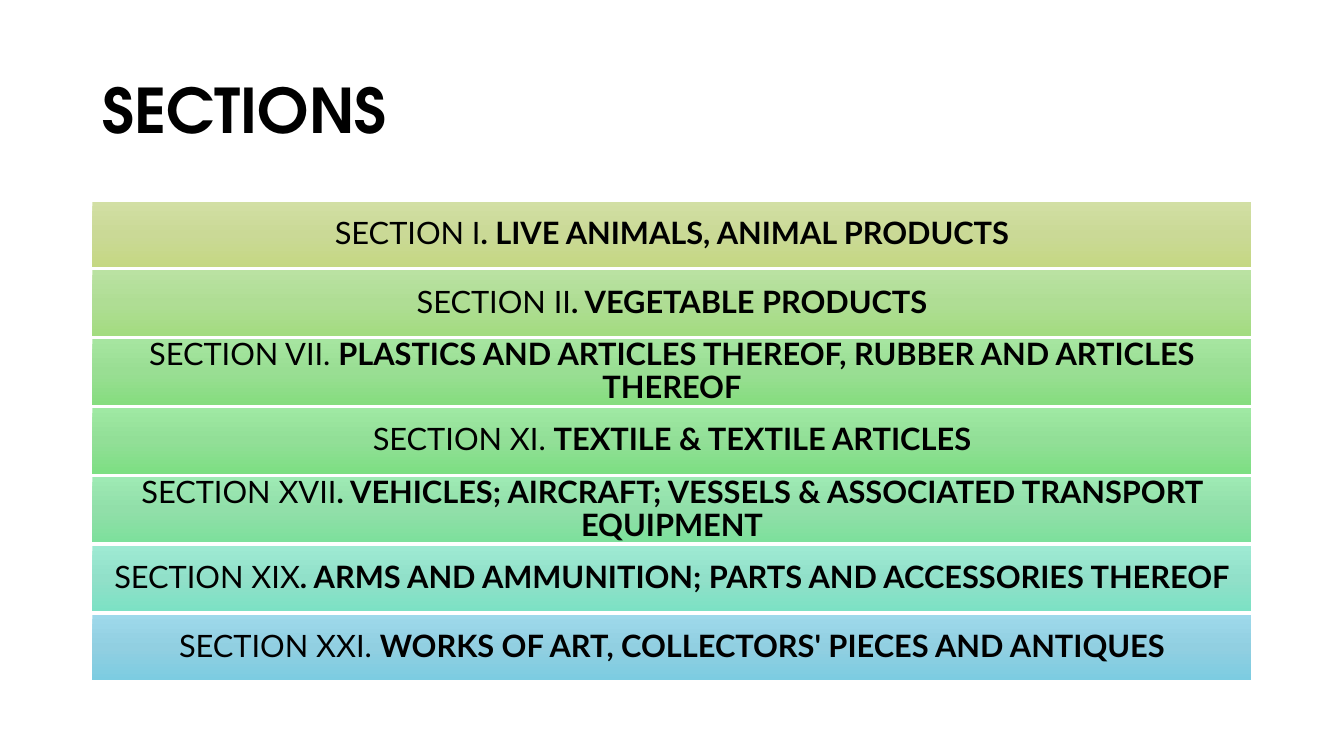
"""Build a slide that lists customs sections as coloured bands."""
from copy import deepcopy
from dataclasses import dataclass

from pptx import Presentation
from pptx.dml.color import RGBColor
from pptx.enum.shapes import MSO_SHAPE
from pptx.enum.text import MSO_ANCHOR, PP_ALIGN
from pptx.oxml.ns import qn
from pptx.util import Cm, Pt

COLORS = {
    "ink": "000000",
    "olive": "D2DFA4 CAD996 C5D883",
    "lime": "BAE2A2 AFDD94 A3DC80",
    "leaf": "A6E5A0 99DE93 86DD7F",
    "green": "9FE9A3 92DF97 7DDF83",
    "mint": "9EEAB4 91DFA9 7DE09C",
    "teal": "9EEAD3 91E0C9 7CE1C4",
    "sky": "9ED9EB 91CFE1 7CCCE1",
}
LEFT, WIDTH = 2.33, 29.21
TOP, LAST, HEIGHT = 5.08, 15.49, 1.65
INSET = Cm(0.15)
FRAME = {
    "word_wrap": True,
    "vertical_anchor": MSO_ANCHOR.MIDDLE,
}
MARGINS = {
    "margin_left": INSET,
    "margin_right": INSET,
    "margin_top": INSET,
    "margin_bottom": INSET,
}
TITLE = {"name": "TeX Gyre Adventor", "size": Pt(44), "bold": True}
PLAIN = {"name": "Lato", "size": Pt(22), "bold": False}
BOLD = {**PLAIN, "bold": True}


@dataclass
class Band:
    """One section with its plain label, bold name and gradient."""
    label: str
    name: str
    hue: str


BANDS = [
    Band("SECTION I", ". LIVE ANIMALS, ANIMAL PRODUCTS", "olive"),
    Band("SECTION II", ". VEGETABLE PRODUCTS", "lime"),
    Band("SECTION VII. ",
         "PLASTICS AND ARTICLES THEREOF, RUBBER AND ARTICLES THEREOF", "leaf"),
    Band("SECTION XI. ", "TEXTILE & TEXTILE ARTICLES", "green"),
    Band("SECTION XVII",
         ". VEHICLES; AIRCRAFT; VESSELS & ASSOCIATED TRANSPORT EQUIPMENT", "mint"),
    Band("SECTION XIX",
         ". ARMS AND AMMUNITION; PARTS AND ACCESSORIES THEREOF", "teal"),
    Band("SECTION XXI. ", "WORKS OF ART, COLLECTORS' PIECES AND ANTIQUES", "sky"),
]


def style(item, values: dict) -> None:
    """Set each named attribute on the item."""
    for key, value in values.items():
        setattr(item, key, value)


def write(shape, runs: list, frame: dict, align: PP_ALIGN) -> None:
    """Fill the shape with one paragraph of styled runs."""
    style(shape.text_frame, frame)
    para = shape.text_frame.paragraphs[0]
    style(para, {"alignment": align, "line_spacing": 0.9})
    for text, font in runs:
        run = para.add_run()
        run.text = text
        style(run.font, font)
        run.font.color.rgb = RGBColor.from_string(COLORS["ink"])


def shade(shape, hue: str) -> None:
    """Give the shape a three-stop gradient from top to bottom."""
    shape.fill.gradient()
    shape.fill.gradient_angle = 270
    stops = shape._element.spPr.find(qn("a:gradFill")).find(qn("a:gsLst"))
    stops.insert(1, deepcopy(stops[0]))
    for num, (stop, color) in enumerate(
            zip(shape.fill.gradient_stops, COLORS[hue].split())):
        stop.position = num / 2
        stop.color.rgb = RGBColor.from_string(color)


def draw(slide, band: Band, top: float) -> None:
    """Draw one band at the given height."""
    shape = slide.shapes.add_shape(
        MSO_SHAPE.RECTANGLE, Cm(LEFT), Cm(top), Cm(WIDTH), Cm(HEIGHT))
    shape.shadow.inherit = False
    shape.line.fill.background()
    shade(shape, band.hue)
    write(shape, [(band.label, PLAIN), (band.name, BOLD)],
          {**FRAME, **MARGINS}, PP_ALIGN.CENTER)


def main() -> None:
    """Build and save the slide."""
    deck = Presentation()
    style(deck, {"slide_width": Cm(33.87), "slide_height": Cm(19.05)})
    slide = deck.slides.add_slide(deck.slide_layouts[6])
    title = slide.shapes.add_textbox(Cm(LEFT), Cm(1.01), Cm(WIDTH), Cm(3.68))
    write(title, [("SECTIONS", TITLE)], FRAME, PP_ALIGN.LEFT)
    step = (LAST - TOP) / (len(BANDS) - 1)
    for num, band in enumerate(BANDS):
        draw(slide, band, TOP + num * step)
    deck.save("out.pptx")


if __name__ == "__main__":
    main()
